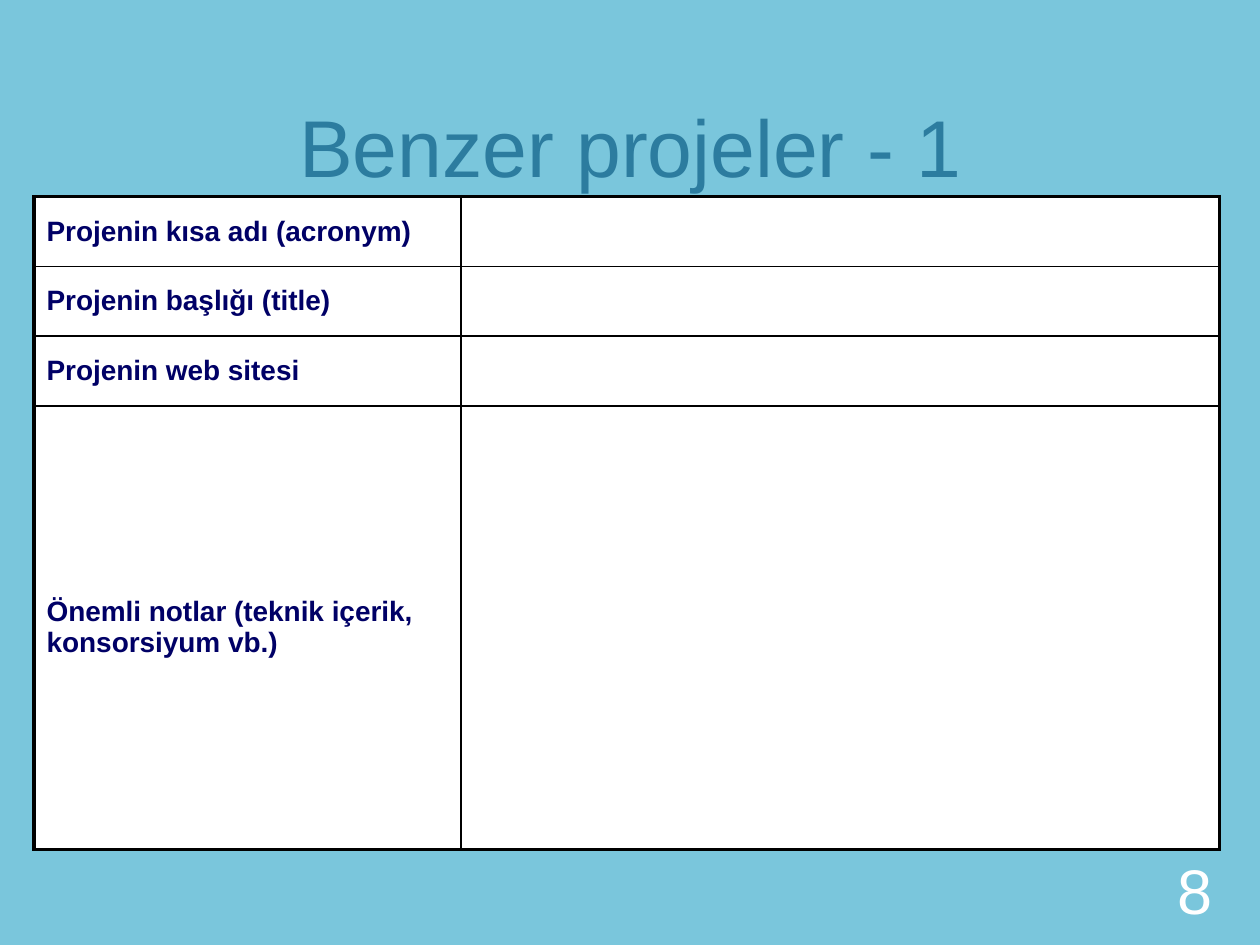
from lxml import etree
from pptx import Presentation
from pptx import util as u
from pptx.dml.color import RGBColor
from pptx.enum import text
from pptx.oxml.ns import qn

SKY = RGBColor(0x7A, 0xC6, 0xDC)
TEAL = RGBColor(0x2C, 0x7C, 0x9F)
NAVY = RGBColor(0x00, 0x00, 0x66)
WHITE = RGBColor(0xFF, 0xFF, 0xFF)
BLACK = RGBColor(0x00, 0x00, 0x00)

WIDE, HIGH = u.Inches(10), u.Inches(7.5)
THICK, THIN = u.Pt(2.25), u.Pt(1)
LABELS = [
    "Projenin kısa adı (acronym)",
    "Projenin başlığı (title)",
    "Projenin web sitesi",
    "Önemli notlar (teknik içerik, konsorsiyum vb.)",
]
COLS = [0.36, 0.64]
ROWS = [0.107, 0.107, 0.107, 0.679]


def area(left, top, width, height):
    return int(left * WIDE), int(top * HIGH), int(width * WIDE), int(height * HIGH)


def write(frame, words, size=16, color=NAVY, bold=False,
          align=text.PP_ALIGN.LEFT):
    frame.word_wrap = True
    para = frame.paragraphs[0]
    para.alignment = align
    run = para.add_run()
    run.text = words
    font = run.font
    font.name, font.size, font.bold = "Arial", u.Pt(size), bold
    font.color.rgb = color


def add_text(slide, box, words, anchor, **style):
    frame = slide.shapes.add_textbox(*box).text_frame
    frame.vertical_anchor = anchor
    write(frame, words, **style)


def add_edge(cell, side, width):
    props = cell._tc.get_or_add_tcPr()
    line = etree.SubElement(props, qn("a:ln" + side), w=str(int(width)))
    fill = etree.SubElement(line, qn("a:solidFill"))
    etree.SubElement(fill, qn("a:srgbClr"), val=str(BLACK))


def add_form(slide, box):
    table = slide.shapes.add_table(len(ROWS), len(COLS), *box).table
    table.first_row = table.horz_banding = False
    for col, share in zip(table.columns, COLS):
        col.width = int(box[2] * share)
    for row, share in zip(table.rows, ROWS):
        row.height = int(box[3] * share)
    for r, label in enumerate(LABELS):
        for c in range(len(COLS)):
            cell = table.cell(r, c)
            outer = {"L": c == 0, "R": c == len(COLS) - 1,
                     "T": r == 0, "B": r == len(ROWS) - 1}
            for side, thick in outer.items():
                add_edge(cell, side, THICK if thick else THIN)
            cell.fill.solid()
            cell.fill.fore_color.rgb = WHITE
            cell.vertical_anchor = text.MSO_ANCHOR.MIDDLE
        write(table.cell(r, 0).text_frame, label, bold=True)


def main():
    deck = Presentation()
    deck.slide_width, deck.slide_height = WIDE, HIGH
    slide = deck.slides.add_slide(deck.slide_layouts[6])
    slide.background.fill.solid()
    slide.background.fill.fore_color.rgb = SKY
    add_text(slide, area(0.06, 0.016, 0.88, 0.195), "Benzer projeler - 1",
             text.MSO_ANCHOR.BOTTOM, size=46, color=TEAL,
             align=text.PP_ALIGN.CENTER)
    add_text(slide, area(0.864, 0.915, 0.108, 0.053), "8",
             text.MSO_ANCHOR.MIDDLE, size=36, color=WHITE,
             align=text.PP_ALIGN.RIGHT)
    add_form(slide, area(0.027, 0.208, 0.941, 0.691))
    deck.save("out.pptx")


if __name__ == "__main__":
    main()
